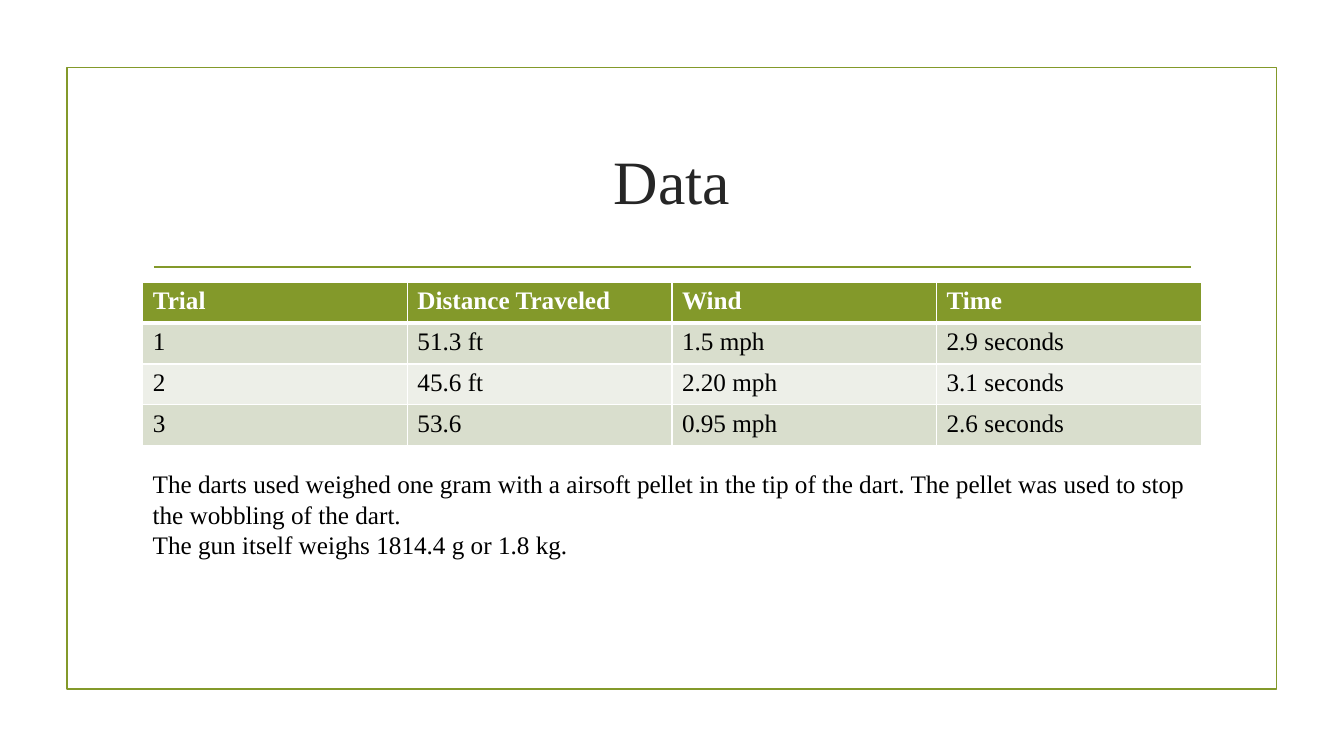
from lxml.etree import SubElement
from pptx import Presentation
from pptx.dml.color import RGBColor
from pptx.enum.shapes import MSO_CONNECTOR, MSO_SHAPE
from pptx.enum.text import MSO_ANCHOR, PP_ALIGN
from pptx.oxml.ns import qn
from pptx.util import Pt

FONT = "Times New Roman"
COLORS = {
    "green": "83992A",
    "title": "262626",
    "body": "000000",
    "white": "FFFFFF",
    "odd_row": "D9DECD",
    "even_row": "EDEFE8",
}
LEFT, WIDTH = 102, 756
ROW_HEIGHT = 29.2
TRIALS = [
    ["Trial", "Distance Traveled", "Wind", "Time"],
    ["1", "51.3 ft", "1.5 mph", "2.9 seconds"],
    ["2", "45.6 ft", "2.20 mph", "3.1 seconds"],
    ["3", "53.6", "0.95 mph", "2.6 seconds"],
]
NOTES = [
    "The darts used weighed one gram with a airsoft pellet in the tip of the dart. "
    "The pellet was used to stop the wobbling of the dart.",
    "The gun itself weighs 1814.4 g or 1.8 kg.",
]


def rgb(name):
    return RGBColor.from_string(COLORS[name])


def add_run(paragraph, text, size, color, bold=False):
    run = paragraph.add_run()
    run.text = text
    run.font.name = FONT
    run.font.size = Pt(size)
    run.font.bold = bold
    run.font.color.rgb = rgb(color)


def add_text(slide, top, height, lines, size, color,
             align=PP_ALIGN.LEFT, anchor=MSO_ANCHOR.TOP):
    box = slide.shapes.add_textbox(Pt(LEFT), Pt(top), Pt(WIDTH), Pt(height))
    frame = box.text_frame
    frame.word_wrap = True
    frame.vertical_anchor = anchor
    for index, line in enumerate(lines):
        paragraph = frame.add_paragraph() if index else frame.paragraphs[0]
        paragraph.alignment = align
        add_run(paragraph, line, size, color)


def add_frame(slide):
    border = slide.shapes.add_shape(
        MSO_SHAPE.RECTANGLE, Pt(47.8), Pt(48.2), Pt(864), Pt(444))
    border.shadow.inherit = False
    border.fill.background()
    border.line.color.rgb = rgb("green")
    border.line.width = Pt(1.25)


def add_title_rule(slide):
    rule = slide.shapes.add_connector(
        MSO_CONNECTOR.STRAIGHT, Pt(110), Pt(190.8), Pt(850.4), Pt(190.8))
    rule.line.color.rgb = rgb("green")
    rule.line.width = Pt(1.25)
    SubElement(rule._element.spPr, qn("a:effectLst"))


def set_borders(cell, widths):
    """Draw white borders; widths maps each side's tag to points."""
    properties = cell._tc.get_or_add_tcPr()
    for position, (side, width) in enumerate(widths.items()):
        border = properties.makeelement(qn(f"a:{side}"), {"w": str(Pt(width))})
        fill = SubElement(border, qn("a:solidFill"))
        SubElement(fill, qn("a:srgbClr"), val=COLORS["white"])
        properties.insert(position, border)


def add_trials_table(slide):
    rows, columns = len(TRIALS), len(TRIALS[0])
    table = slide.shapes.add_table(
        rows, columns, Pt(LEFT), Pt(201.6), Pt(WIDTH), Pt(ROW_HEIGHT * rows)).table
    for r, values in enumerate(TRIALS):
        table.rows[r].height = Pt(ROW_HEIGHT)
        header = r == 0
        fill = "green" if header else "odd_row" if r % 2 else "even_row"
        for c, value in enumerate(values):
            cell = table.cell(r, c)
            cell.fill.solid()
            cell.fill.fore_color.rgb = rgb(fill)
            set_borders(cell, {"lnL": 1, "lnR": 1,
                               "lnT": 3 if r == 1 else 1,
                               "lnB": 3 if header else 1})
            add_run(cell.text_frame.paragraphs[0], value, 18,
                    "white" if header else "body", bold=header)


def main():
    presentation = Presentation()
    presentation.slide_width, presentation.slide_height = Pt(960), Pt(540)
    slide = presentation.slides.add_slide(presentation.slide_layouts[6])
    add_frame(slide)
    add_title_rule(slide)
    add_text(slide, 77, 103, ["Data"], 44, "title",
             PP_ALIGN.CENTER, MSO_ANCHOR.MIDDLE)
    add_trials_table(slide)
    add_text(slide, 331.2, 72.7, NOTES, 18, "body")
    presentation.save("out.pptx")


if __name__ == "__main__":
    main()
